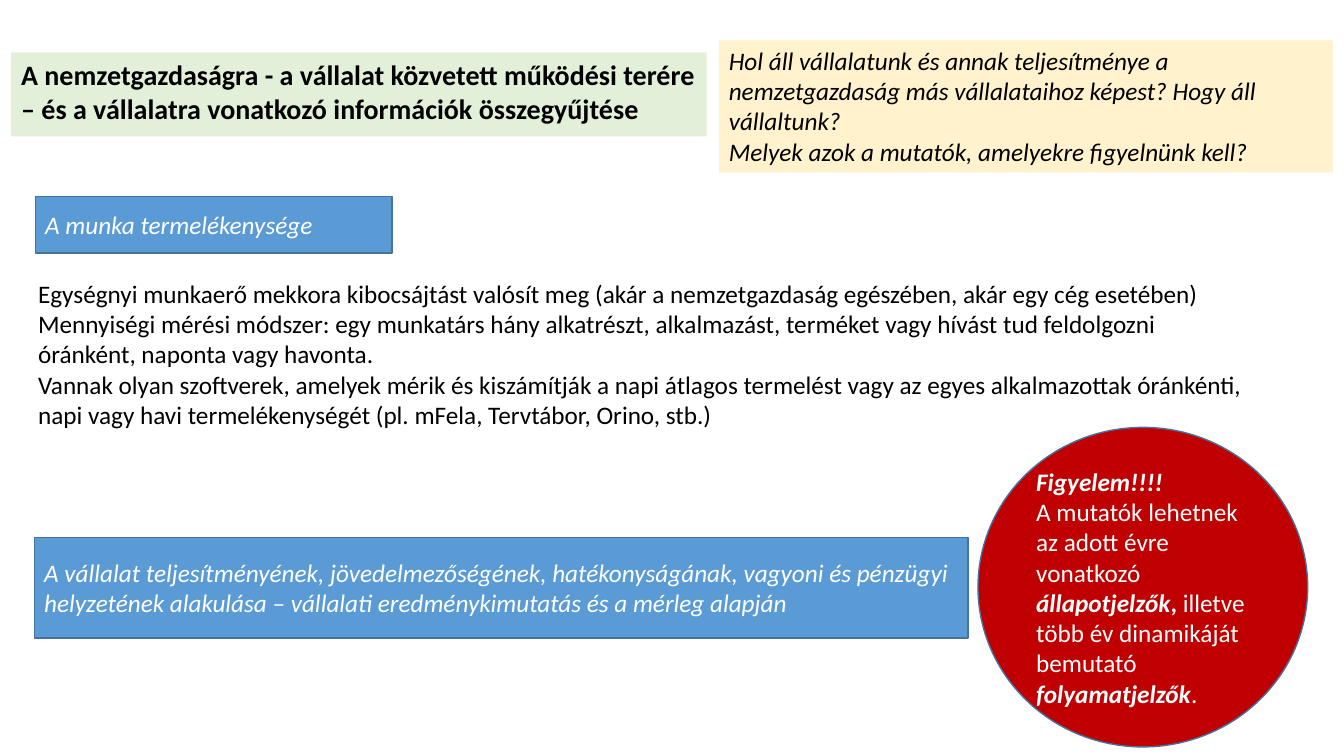
import pptx
import pptx.util
import pptx.dml.color
import pptx.enum.shapes
import pptx.enum.text

Inches = pptx.util.Inches
Shape = pptx.enum.shapes.MSO_SHAPE
Anchor = pptx.enum.text.MSO_ANCHOR
AutoSize = pptx.enum.text.MSO_AUTO_SIZE

# Content: each paragraph is a list of (text, style) runs; b = bold, i = italic
HEADING = [[("A nemzetgazdaságra - a vállalat közvetett működési terére – és a "
             "vállalatra vonatkozó információk összegyűjtése", "b")]]
QUESTIONS = [
    [("Hol áll vállalatunk és annak teljesítménye a nemzetgazdaság más "
      "vállalataihoz képest? Hogy áll vállaltunk?", "i")],
    [("Melyek azok a mutatók, amelyekre figyelnünk kell?", "i")],
]
EXPLANATION = [
    [("Egységnyi munkaerő mekkora kibocsájtást valósít meg (akár a "
      "nemzetgazdaság egészében, akár egy cég esetében)", "")],
    [("Mennyiségi mérési módszer: egy munkatárs hány alkatrészt, alkalmazást, "
      "terméket vagy hívást tud feldolgozni óránként, naponta vagy havonta.", "")],
    [("Vannak olyan szoftverek, amelyek mérik és kiszámítják a napi átlagos "
      "termelést vagy az egyes alkalmazottak óránkénti, napi vagy havi "
      "termelékenységét (pl. mFela, Tervtábor, Orino, stb.)", "")],
]
PRODUCTIVITY = [[("A munka termelékenysége", "i")]]
PERFORMANCE = [[("A vállalat teljesítményének, jövedelmezőségének, hatékonyságának, "
                 "vagyoni és pénzügyi helyzetének alakulása – vállalati "
                 "eredménykimutatás és a mérleg alapján", "i")]]
WARNING = [
    [("Figyelem!!!!", "bi")],
    [("A mutatók lehetnek az adott évre vonatkozó ", ""), ("állapotjelzők", "bi"),
     (",", "b"), (" illetve több év dinamikáját bemutató ", ""),
     ("folyamatjelzők", "bi"), (".", "")],
]

COLORS = {"green": "E2F0D9", "cream": "FFF2CC", "blue": "5B9BD5", "red": "C00000",
          "outline": "43739E", "black": "000000", "white": "FFFFFF"}

# Boxes: paragraphs, (left, top, width, height), preset, fill
HEADING_BOX = (0.11, 0.52, 6.9, 0.77)
EXPLANATION_BOX = (0.28, 2.71, 12.26, 1.62)
QUESTIONS_BOX = (7.13, 0.4, 6.09, 1.31)
OUTLINED = [
    (PRODUCTIVITY, (0.35, 1.95, 3.54, 0.56), Shape.RECTANGLE, "blue"),
    (PERFORMANCE, (0.34, 5.33, 9.26, 1), Shape.RECTANGLE, "blue"),
    (WARNING, (9.7, 4.24, 3.27, 3.17), Shape.OVAL, "red"),
]


def color(name):
    return pptx.dml.color.RGBColor.from_string(COLORS[name])


def paint(box, fill):
    box.fill.solid()
    box.fill.fore_color.rgb = color(fill)


def write(box, paragraphs, ink, size=18, anchor=Anchor.TOP, fit=AutoSize.SHAPE_TO_FIT_TEXT):
    frame = box.text_frame
    frame.word_wrap = True
    frame.auto_size = fit
    frame.vertical_anchor = anchor
    for number, runs in enumerate(paragraphs):
        paragraph = frame.add_paragraph() if number else frame.paragraphs[0]
        paragraph.alignment = pptx.enum.text.PP_ALIGN.LEFT
        paragraph.line_spacing = 1.0
        for text, style in runs:
            run = paragraph.add_run()
            run.text = text
            run.font.name = "Calibri"
            run.font.size = pptx.util.Pt(size)
            run.font.bold = "b" in style
            run.font.italic = "i" in style
            run.font.color.rgb = color(ink)


def add_box(slide, place, preset, fill):
    box = slide.shapes.add_shape(preset, *map(Inches, place))
    box.shadow.inherit = False
    paint(box, fill)
    return box


def main():
    deck = pptx.Presentation()
    deck.slide_width, deck.slide_height = Inches(13.33), Inches(7.5)
    slide = deck.slides.add_slide(deck.slide_layouts.get_by_name("Title Only"))

    # Heading
    heading = slide.shapes.title
    heading.left, heading.top, heading.width, heading.height = map(Inches, HEADING_BOX)
    paint(heading, "green")
    write(heading, HEADING, "black", size=20)

    # Questions
    questions = add_box(slide, QUESTIONS_BOX, Shape.RECTANGLE, "cream")
    questions.line.fill.background()
    write(questions, QUESTIONS, "black")

    # Explanation
    explanation = slide.shapes.add_textbox(*map(Inches, EXPLANATION_BOX))
    write(explanation, EXPLANATION, "black")

    # Topic bars and warning circle
    for paragraphs, place, preset, fill in OUTLINED:
        topic = add_box(slide, place, preset, fill)
        topic.line.color.rgb = color("outline")
        topic.line.width = pptx.util.Pt(1)
        write(topic, paragraphs, "white", anchor=Anchor.MIDDLE, fit=AutoSize.NONE)

    deck.save("out.pptx")


if __name__ == "__main__":
    main()
